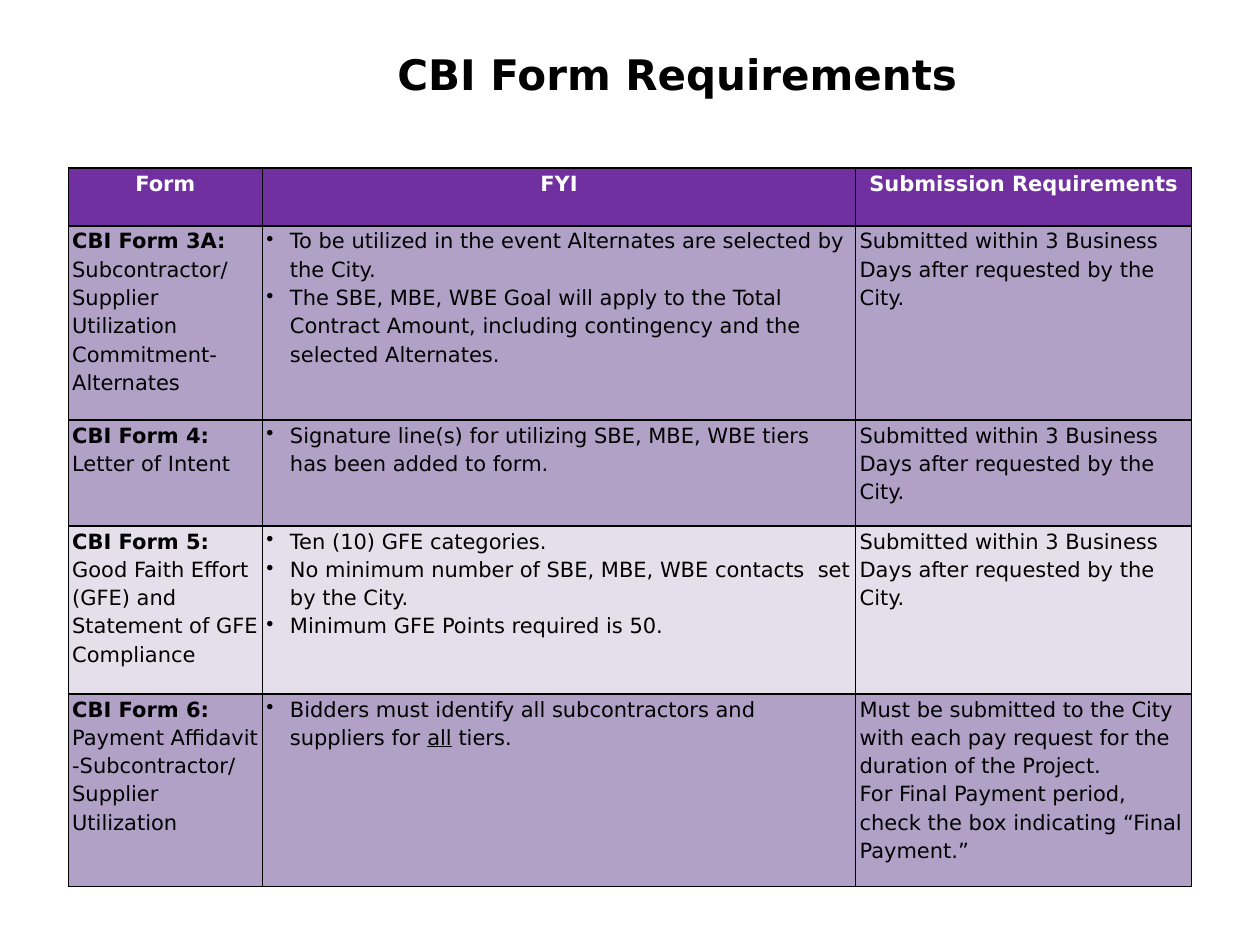
from lxml import etree
from pptx import Presentation
from pptx.dml.color import RGBColor
from pptx.enum import text
from pptx.oxml import ns
from pptx.util import Pt

FONT = "DejaVu Sans"
BLACK, WHITE = "000000", "FFFFFF"
PURPLE, LILAC, PALE = "7030A0", "B2A1C7", "E5DFEC"
LEFT, CENTER = text.PP_ALIGN.LEFT, text.PP_ALIGN.CENTER

COLUMN_WIDTHS = [111, 339, 192]
ROW_HEIGHTS = [33, 111, 60.5, 96, 110]
HEADINGS = ["Form", "FYI", "Submission Requirements"]
THREE_DAYS = ["Submitted within 3 Business Days after requested by the City."]

# Form number, form name, notes, submission rules, fill; a tuple is a line of several spans.
FORMS = [
    ("CBI Form 3A:", "Subcontractor/ Supplier Utilization Commitment-Alternates",
     ["To be utilized in the event Alternates are selected by the City.",
      "The SBE, MBE, WBE Goal will apply to the Total Contract Amount, "
      "including contingency and the selected Alternates."],
     THREE_DAYS, LILAC),
    ("CBI Form 4:", "Letter of Intent",
     ["Signature line(s) for utilizing SBE, MBE, WBE tiers has been added to form."],
     THREE_DAYS, LILAC),
    ("CBI Form 5:", "Good Faith Effort (GFE) and Statement of GFE Compliance",
     ["Ten (10) GFE categories.",
      "No minimum number of SBE, MBE, WBE contacts  set by the City.",
      "Minimum GFE Points required is 50."],
     THREE_DAYS, PALE),
    ("CBI Form 6:", "Payment Affidavit -Subcontractor/ Supplier Utilization",
     [("Bidders must identify all subcontractors and suppliers for ",
       ("all", {"underline": True}), " tiers.")],
     ["Must be submitted to the City with each pay request for the duration of the Project.",
      "For Final Payment period, check the box indicating “Final Payment.”"],
     LILAC),
]


def color(value):
    return RGBColor.from_string(value)


def add_bullet(para, indent):
    properties = para._p.get_or_add_pPr()
    properties.set("marL", str(Pt(indent)))
    properties.set("indent", str(-Pt(indent)))
    etree.SubElement(properties, ns.qn("a:buChar"), char="•")


def write(frame, lines, size=12, ink=BLACK, bold=False, align=LEFT, spacing=1, bullet=False):
    """Fill a frame; a line is a string or a tuple of strings and (string, font settings)."""
    for index, line in enumerate(lines):
        para = frame.add_paragraph() if index else frame.paragraphs[0]
        para.alignment = align
        para.line_spacing = spacing
        if bullet:
            add_bullet(para, 13.5)
        for part in line if isinstance(line, tuple) else (line,):
            words, settings = part if isinstance(part, tuple) else (part, {})
            span = para.add_run()
            span.text = words
            font = span.font
            font.name, font.size, font.bold = FONT, Pt(size), bold
            font.color.rgb = color(ink)
            for name, value in settings.items():
                setattr(font, name, value)


def add_borders(cell, ink, width):
    properties = cell._tc.get_or_add_tcPr()
    for side in ("lnL", "lnR", "lnT", "lnB"):
        line = etree.SubElement(properties, ns.qn(f"a:{side}"), w=str(Pt(width)))
        fill = etree.SubElement(line, ns.qn("a:solidFill"))
        etree.SubElement(fill, ns.qn("a:srgbClr"), val=ink)


def fill_cell(cell, lines, fill, **text_format):
    cell.margin_left = cell.margin_right = Pt(2.25)
    cell.margin_top = cell.margin_bottom = 0
    add_borders(cell, BLACK, 1)
    cell.fill.solid()
    cell.fill.fore_color.rgb = color(fill)
    write(cell.text_frame, lines, spacing=1.15, **text_format)


def add_title(page, left, top, width, height):
    box = page.shapes.add_textbox(Pt(left), Pt(top), Pt(width), Pt(height))
    box.text_frame.word_wrap = True
    write(box.text_frame, ["CBI Form Requirements"], size=24, bold=True, align=CENTER)


def add_forms_table(page, left, top):
    table = page.shapes.add_table(
        len(ROW_HEIGHTS), len(COLUMN_WIDTHS), Pt(left), Pt(top),
        Pt(sum(COLUMN_WIDTHS)), Pt(sum(ROW_HEIGHTS))).table
    for column, width in zip(table.columns, COLUMN_WIDTHS):
        column.width = Pt(width)
    for row, height in zip(table.rows, ROW_HEIGHTS):
        row.height = Pt(height)

    for index, heading in enumerate(HEADINGS):
        fill_cell(table.cell(0, index), [heading], PURPLE, ink=WHITE, bold=True, align=CENTER)
    for index, (number, name, notes, rules, fill) in enumerate(FORMS, start=1):
        form_line = ((number, {"bold": True}), f" {name}")
        fill_cell(table.cell(index, 0), [form_line], fill)
        fill_cell(table.cell(index, 1), notes, fill, bullet=True)
        fill_cell(table.cell(index, 2), rules, fill)


def main():
    deck = Presentation()
    deck.slide_width, deck.slide_height = Pt(720), Pt(540)
    page = deck.slides.add_slide(deck.slide_layouts[6])
    add_forms_table(page, 39, 96)
    add_title(page, 192, 24, 390, 72)
    deck.save("out.pptx")


if __name__ == "__main__":
    main()
